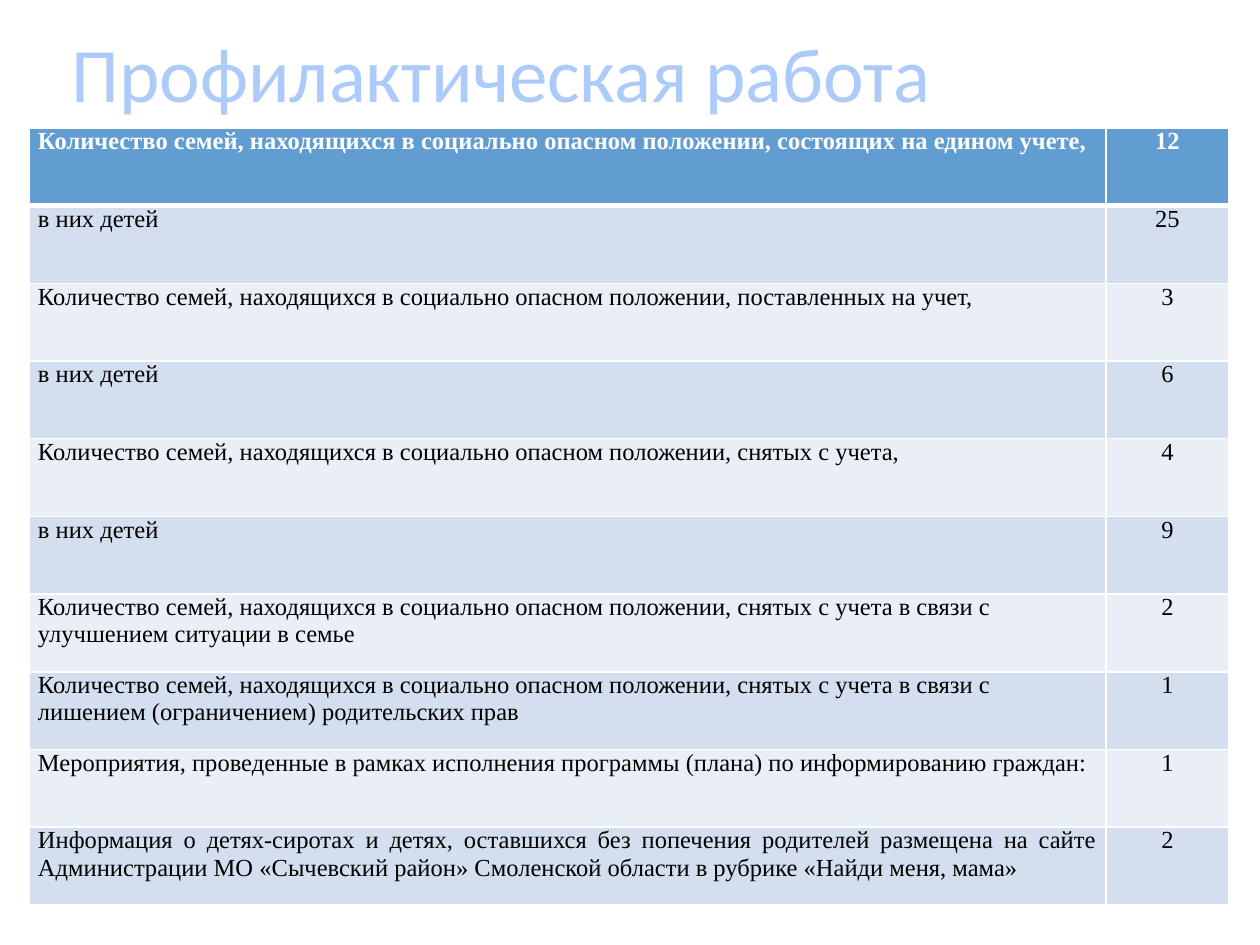
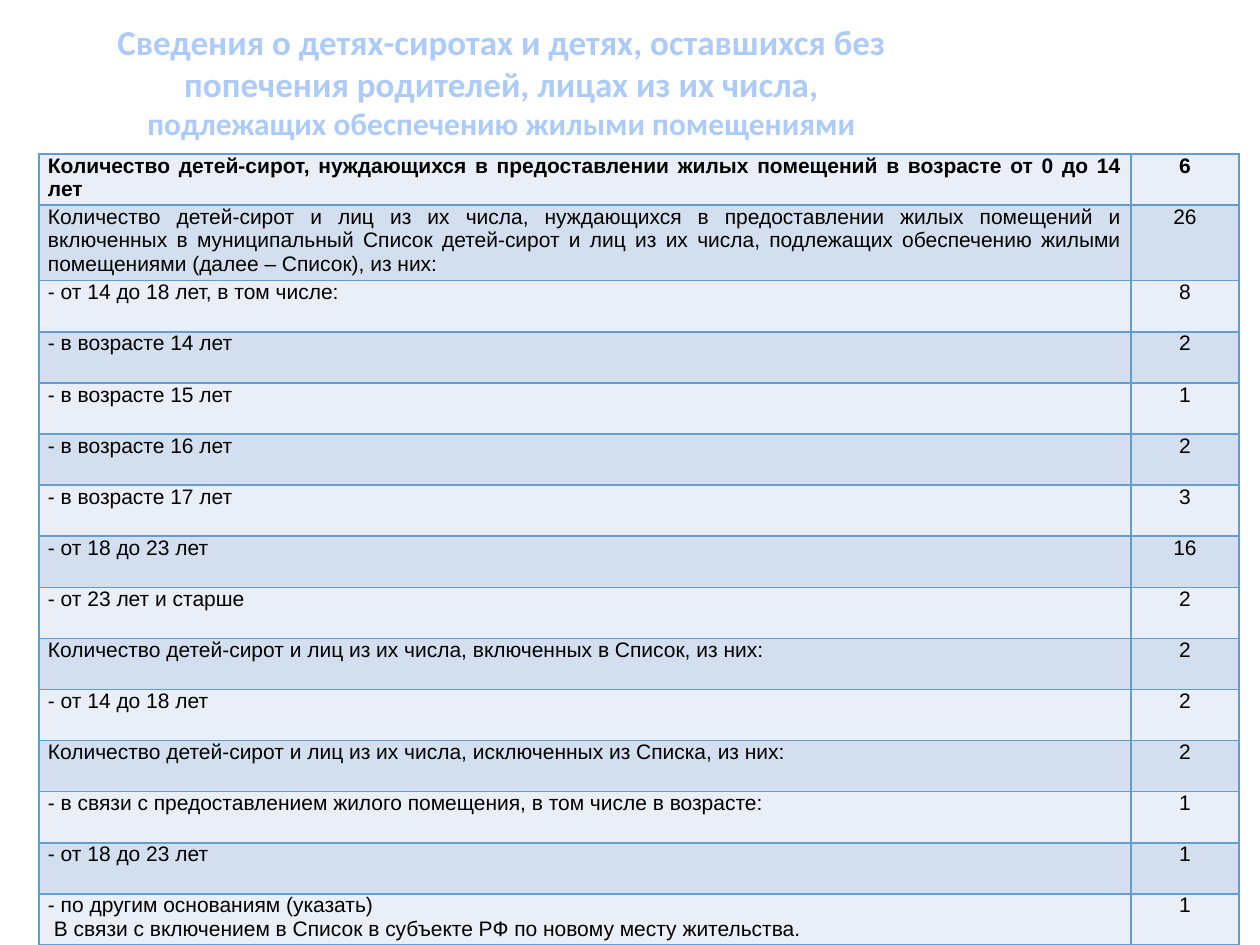
from dataclasses import dataclass

from lxml import etree
from pptx import Presentation
from pptx.dml.color import RGBColor
from pptx.enum.text import MSO_ANCHOR, PP_ALIGN
from pptx.oxml.ns import qn
from pptx.util import Pt

MIDDLE, TOP = MSO_ANCHOR.MIDDLE, MSO_ANCHOR.TOP
CENTER, JUSTIFY, LEFT = PP_ALIGN.CENTER, PP_ALIGN.JUSTIFY, PP_ALIGN.LEFT
EMU_PER_PX = 914400 / 126


@dataclass(frozen=True)
class Theme:
    """Colours, fonts and sizes shared by the slides."""

    title: str = "ACCBF9"
    accent: str = "629DD1"
    band_dark: str = "D3DFEE"
    band_light: str = "EAEFF7"
    white: str = "FFFFFF"
    black: str = "000000"
    title_font: str = "Calibri"
    title_size: int = 44
    heading_size: int = 20
    subheading_size: int = 18
    thin_rule: int = 1
    thick_rule: int = 3
    cell_margin: int = 9
    follow_indent: int = 6


@dataclass(frozen=True)
class TableStyle:
    """Look of one table."""

    font: str
    size: int
    rule: str
    header_fill: str
    header_color: str
    header_rule: int


THEME = Theme()
PREVENTION_STYLE = TableStyle("Times New Roman", 14, THEME.white, THEME.accent,
                              THEME.white, THEME.thick_rule)
HOUSING_STYLE = TableStyle("Arial", 12, THEME.accent, THEME.band_light,
                           THEME.black, THEME.thin_rule)

PREVENTION_ROWS = [
    ("Количество семей, находящихся в социально опасном положении, состоящих на едином учете,", 12),
    ("в них детей", 25),
    ("Количество семей, находящихся в социально опасном положении, поставленных на учет,", 3),
    ("в них детей", 6),
    ("Количество семей, находящихся в социально опасном положении, снятых с учета,", 4),
    ("в них детей", 9),
    ("Количество семей, находящихся в социально опасном положении, снятых с учета "
     "в связи с улучшением ситуации в семье", 2),
    ("Количество семей, находящихся в социально опасном положении, снятых с учета "
     "в связи с лишением (ограничением) родительских прав", 1),
    ("Мероприятия, проведенные в рамках исполнения программы (плана) по информированию граждан:", 1),
    ("Информация о детях-сиротах и детях, оставшихся без попечения родителей размещена "
     "на сайте Администрации МО «Сычевский район» Смоленской области "
     "в рубрике «Найди меня, мама»", 2),
]
PREVENTION_LEFT_ROWS = (6, 7)

HOUSING_ROWS = [
    ("Количество детей-сирот, нуждающихся в предоставлении жилых помещений "
     "в возрасте от 0 до 14 лет", 6),
    ("Количество детей-сирот и лиц из их числа, нуждающихся в предоставлении жилых помещений "
     "и включенных в муниципальный Список детей-сирот и лиц из их числа, подлежащих "
     "обеспечению жилыми помещениями (далее – Список), из них:", 26),
    ("- от 14 до 18 лет, в том числе:", 8),
    ("- в возрасте 14 лет", 2),
    ("- в возрасте 15 лет", 1),
    ("- в возрасте 16 лет", 2),
    ("- в возрасте 17 лет", 3),
    ("- от 18 до 23 лет", 16),
    ("- от 23 лет и старше", 2),
    ("Количество детей-сирот и лиц из их числа, включенных в Список, из них:", 2),
    ("- от 14 до 18 лет", 2),
    ("Количество детей-сирот и лиц из их числа, исключенных из Списка, из них:", 2),
    ("- в связи с предоставлением жилого помещения, в том числе в возрасте:", 1),
    ("- от 18 до 23 лет", 1),
    ("- по другим основаниям (указать)\n"
     "В связи с включением в Список в субъекте РФ по новому месту жительства.", 1),
]


def px(length):
    """Turn pixels into EMU."""
    return round(length * EMU_PER_PX)


def style_font(font, name, size, color, bold):
    """Set the face, size, colour and weight of a font."""
    font.name, font.size, font.bold = name, Pt(size), bold
    font.color.rgb = RGBColor.from_string(color)


def add_title(page, box, lines, bold):
    """Put a centred title of (text, size) lines into the box."""
    frame = page.shapes.add_textbox(*map(px, box)).text_frame
    frame.word_wrap = True
    frame.vertical_anchor = MIDDLE
    para = frame.paragraphs[0]
    para.text = "\v".join(text for text, _ in lines)
    para.alignment = CENTER
    for span, (_, size) in zip(para.runs, lines):
        style_font(span.font, THEME.title_font, size, THEME.title, bold)


def set_borders(cell, color, top, bottom):
    """Draw the four sides of a cell, with widths in points."""
    properties = cell._tc.get_or_add_tcPr()
    sides = (("lnL", THEME.thin_rule), ("lnR", THEME.thin_rule), ("lnT", top), ("lnB", bottom))
    for position, (side, width) in enumerate(sides):
        line = etree.Element(qn(f"a:{side}"), w=str(Pt(width)))
        fill = etree.SubElement(line, qn("a:solidFill"))
        etree.SubElement(fill, qn("a:srgbClr"), val=color)
        properties.insert(position, line)


def fill_cell(cell, text, alignment, style, row):
    """Write one cell and give it the look of its row."""
    header = row == 0
    band = THEME.band_dark if row % 2 else THEME.band_light
    cell.fill.solid()
    cell.fill.fore_color.rgb = RGBColor.from_string(style.header_fill if header else band)
    cell.margin_left = cell.margin_right = px(THEME.cell_margin)
    cell.margin_top = cell.margin_bottom = 0
    cell.vertical_anchor = TOP
    set_borders(cell, style.rule,
                style.header_rule if row == 1 else THEME.thin_rule,
                style.header_rule if header else THEME.thin_rule)
    cell.text_frame.text = text
    for number, para in enumerate(cell.text_frame.paragraphs):
        para.alignment = alignment
        if number:
            para._p.get_or_add_pPr().set("marL", str(px(THEME.follow_indent)))
        for span in para.runs:
            style_font(span.font, style.font, style.size,
                       style.header_color if header else THEME.black, header)


def add_count_table(page, box, count_width, rows, style, left_rows=()):
    """Fill the box with a table of descriptions and counts in equal rows."""
    left, top, width, height = box
    table = page.shapes.add_table(len(rows), 2, *map(px, box)).table
    table.first_row = table.horz_banding = False
    table.columns[0].width = px(width - count_width)
    table.columns[1].width = px(count_width)
    for row, (description, count) in enumerate(rows):
        table.rows[row].height = px(height / len(rows))
        alignment = LEFT if row in left_rows else JUSTIFY
        fill_cell(table.cell(row, 0), description, alignment, style, row)
        fill_cell(table.cell(row, 1), str(count), CENTER, style, row)


def build_prevention(page):
    """Build the slide on preventive work with families."""
    add_title(page, (25, 5, 953, 134), [("Профилактическая работа", THEME.title_size)], False)
    add_count_table(page, (29, 128, 1200, 777), 123, PREVENTION_ROWS,
                    PREVENTION_STYLE, PREVENTION_LEFT_ROWS)


def build_housing(page):
    """Build the slide on housing for orphans."""
    lines = [
        ("Сведения о детях-сиротах и детях, оставшихся без попечения родителей, "
         "лицах из их числа,", THEME.heading_size),
        ("подлежащих обеспечению жилыми помещениями", THEME.subheading_size),
    ]
    add_title(page, (25, 5, 953, 152), lines, True)
    add_count_table(page, (39, 154, 1200, 767), 108, HOUSING_ROWS, HOUSING_STYLE)


def main():
    """Build and save the deck."""
    deck = Presentation()
    deck.slide_width, deck.slide_height = px(1260), px(945)
    for build in (build_prevention, build_housing):
        build(deck.slides.add_slide(deck.slide_layouts[6]))
    deck.save("out.pptx")


if __name__ == "__main__":
    main()
